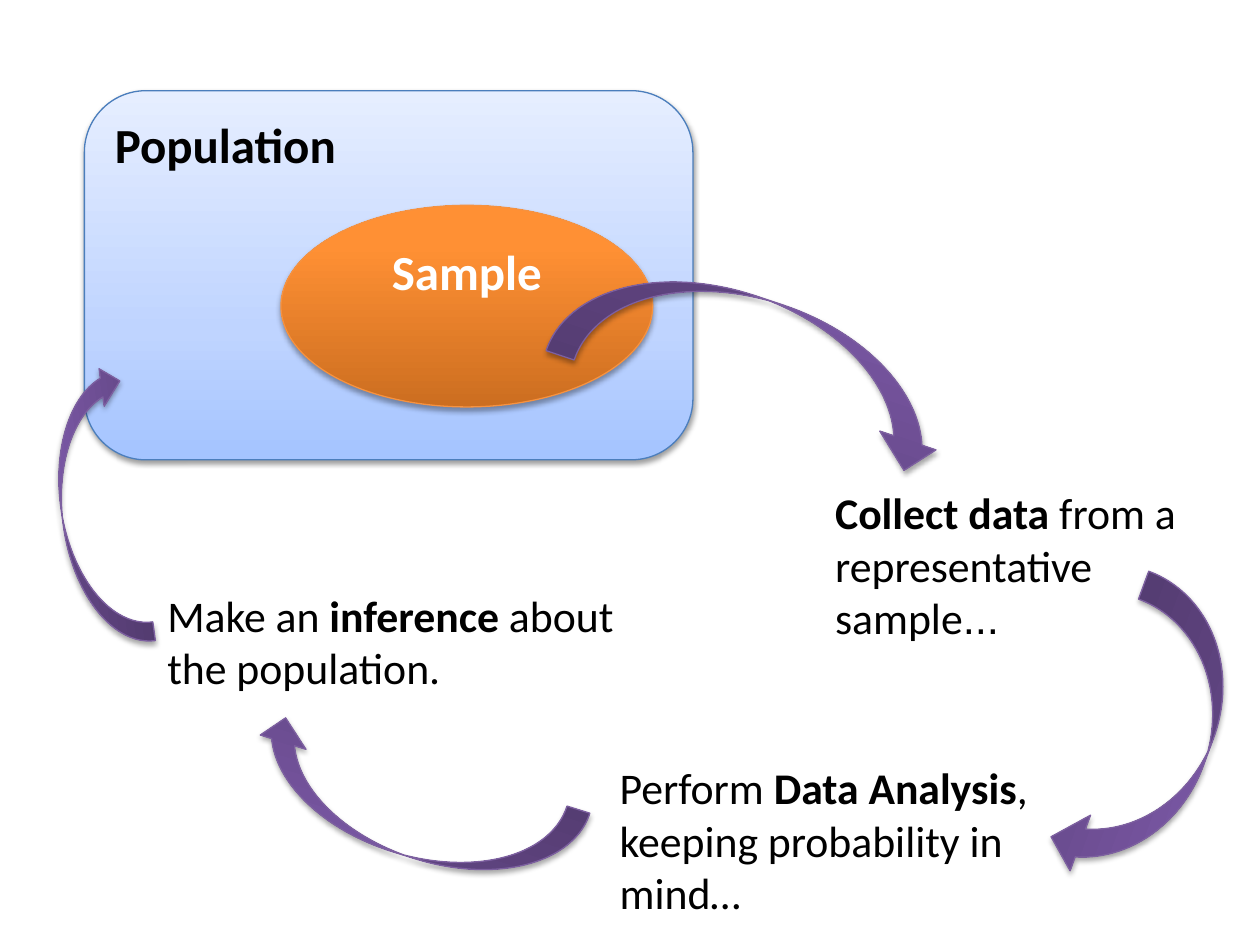
"""Build a slide showing the cycle from population to sample, analysis and inference."""
from lxml.etree import SubElement
from pptx import Presentation
from pptx.dml.color import RGBColor
from pptx.enum.shapes import MSO_SHAPE
from pptx.enum.text import MSO_ANCHOR, MSO_AUTO_SIZE, PP_ALIGN
from pptx.oxml.ns import qn
from pptx.util import Inches, Pt

BODY_FONT, DOTS_FONT = "Calibri", "Arial"
HEADING_SIZE, STEP_SIZE = 28, 25
BLACK, WHITE = "000000", "FFFFFF"
BLUE_STOPS = [(0, "A4C4FF"), (35, "BFD4FF"), (100, "E6EEFF")]
ORANGE_STOPS = [(0, "CC6E20"), (80, "FF9034"), (100, "FF9136")]
PURPLE_STOPS = [(0, "5F4480"), (80, "7B58A6"), (100, "7C57A8")]
BLUE_LINE, ORANGE_LINE, PURPLE_LINE = "4B7EBC", "F69240", "7D60A0"


def paint(shape, stops, line, shadow_alpha=35, shadow_distance=1.8):
    """Give a shape an upward gradient, a thin outline and a soft shadow below."""
    shape.fill.gradient()
    shape.fill.gradient_angle = 90
    properties = shape.fill._xPr
    stop_list = properties.find(qn("a:gradFill")).find(qn("a:gsLst"))
    for default_stop in list(stop_list):
        stop_list.remove(default_stop)
    for percent, color in stops:
        stop = SubElement(stop_list, qn("a:gs"), pos=str(percent * 1000))
        SubElement(stop, qn("a:srgbClr"), val=color)
    shape.line.color.rgb = RGBColor.from_string(line)
    shape.line.width = Pt(0.75)
    shape.shadow.inherit = False
    shadow = SubElement(properties.find(qn("a:effectLst")), qn("a:outerShdw"),
                        blurRad=str(Pt(3.1)), dist=str(Pt(shadow_distance)),
                        dir="5400000", rotWithShape="0")
    shadow_color = SubElement(shadow, qn("a:srgbClr"), val=BLACK)
    SubElement(shadow_color, qn("a:alpha"), val=str(shadow_alpha * 1000))


def write(paragraph, text, size, color=BLACK, bold=False, font=BODY_FONT):
    """Add one formatted run to a paragraph."""
    run = paragraph.add_run()
    run.text = text
    run.font.name = font
    run.font.size = Pt(size)
    run.font.bold = bold
    run.font.color.rgb = RGBColor.from_string(color)


prs = Presentation()
prs.slide_width, prs.slide_height = Inches(10), Inches(7.5)
slide = prs.slides.add_slide(prs.slide_layouts[6])

population = slide.shapes.add_shape(
    MSO_SHAPE.ROUNDED_RECTANGLE, Inches(0.67), Inches(0.72), Inches(4.83), Inches(2.93))
paint(population, BLUE_STOPS, BLUE_LINE, shadow_alpha=38, shadow_distance=1.6)

sample = slide.shapes.add_shape(
    MSO_SHAPE.OVAL, Inches(2.23), Inches(1.63), Inches(2.95), Inches(1.6))
paint(sample, ORANGE_STOPS, ORANGE_LINE)

headings = [
    (population, "Population", BLACK, PP_ALIGN.LEFT),
    (sample, "Sample", WHITE, PP_ALIGN.CENTER),
]
for group, label, color, alignment in headings:
    group.text_frame.vertical_anchor = MSO_ANCHOR.TOP
    heading = group.text_frame.paragraphs[0]
    heading.alignment = alignment
    write(heading, label, HEADING_SIZE, color, bold=True)

collect = [("Collect data ", True, BODY_FONT),
           ("from a representative sample", False, BODY_FONT),
           ("...", False, DOTS_FONT)]
analyse = [("Perform ", False, BODY_FONT),
           ("Data Analysis", True, BODY_FONT),
           (", keeping probability in mind…", False, BODY_FONT)]
infer = [("Make an ", False, BODY_FONT),
         ("inference", True, BODY_FONT),
         (" about the population.", False, BODY_FONT)]

steps = [
    (collect, 6.53, 3.81, 3.38, 1.36),
    (analyse, 4.82, 5.99, 3.94, 1.36),
    (infer, 1.23, 4.62, 3.8, 0.94),
]
for runs, left, top, width, height in steps:
    step = slide.shapes.add_textbox(Inches(left), Inches(top), Inches(width), Inches(height))
    step.text_frame.word_wrap = True
    step.text_frame.auto_size = MSO_AUTO_SIZE.SHAPE_TO_FIT_TEXT
    for text, bold, font in runs:
        write(step.text_frame.paragraphs[0], text, STEP_SIZE, bold=bold, font=font)

sample_to_collect = (4.4, 2.38, 3.23, 0.94, 18.5)
collect_to_analyse = (7.89, 5.39, 2.48, 0.94, 110.2)
analyse_to_infer = (1.91, 6.03, 2.72, 0.76, 197.4)
infer_to_population = (-0.33, 3.72, 2.23, 0.6, 262.2)

cycle = [sample_to_collect, collect_to_analyse, analyse_to_infer, infer_to_population]
for left, top, width, height, rotation in cycle:
    arrow = slide.shapes.add_shape(
        MSO_SHAPE.CURVED_DOWN_ARROW, Inches(left), Inches(top), Inches(width), Inches(height))
    arrow.rotation = rotation
    paint(arrow, PURPLE_STOPS, PURPLE_LINE)

prs.save("out.pptx")
